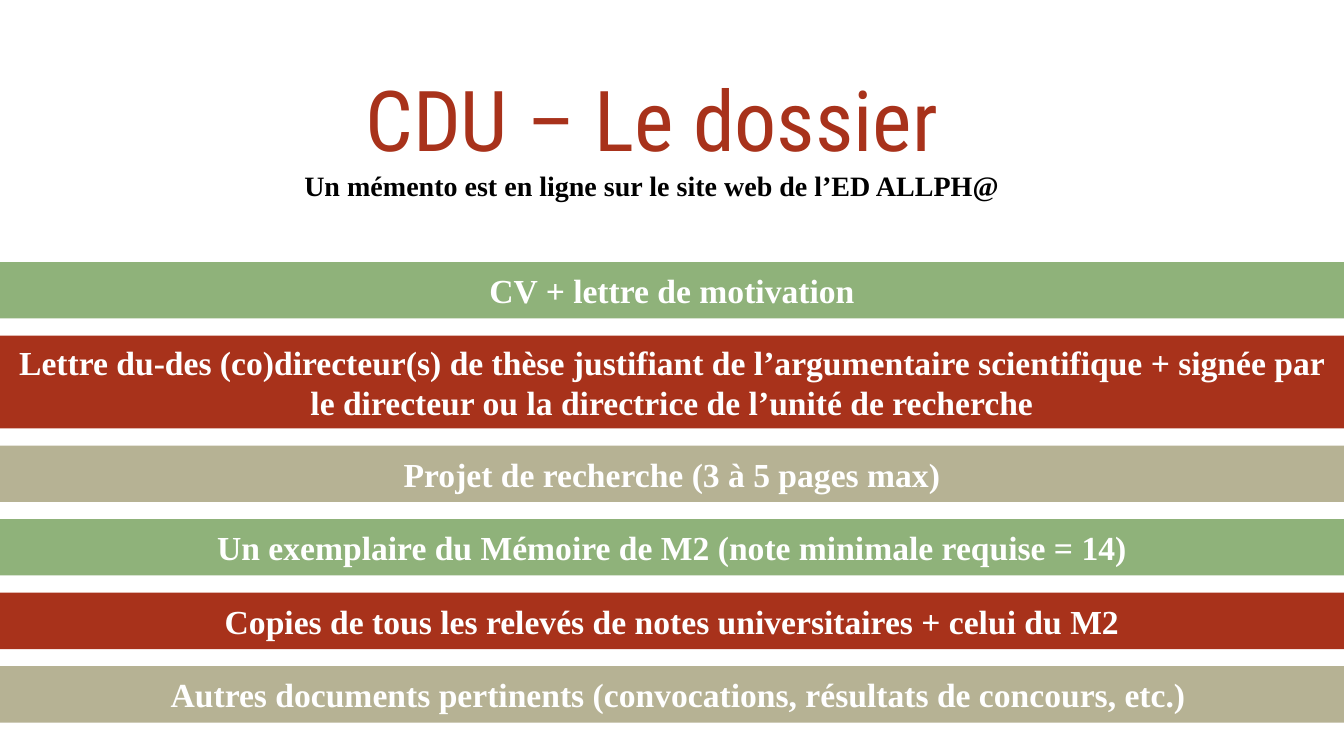
"""Build the slide listing the documents of the CDU application file."""
from dataclasses import dataclass

from pptx import Presentation
from pptx.dml.color import RGBColor
from pptx.enum.shapes import MSO_SHAPE
from pptx.enum.text import MSO_ANCHOR, PP_ALIGN
from pptx.util import Inches, Pt


@dataclass(frozen=True)
class Theme:
    """Colours, fonts and type sizes of the slide."""
    green: str = "8FB27A"
    red: str = "A8321B"
    sand: str = "B6B294"
    white: str = "FFFFFF"
    black: str = "000000"
    title_font: str = "Roboto Condensed"
    body_font: str = "Times New Roman"
    title_size: int = 60
    subtitle_size: int = 20
    band_size: int = 24


THEME = Theme()
WIDTH, HEIGHT = 13.33, 7.5
LINE_HEIGHT, BAND_PADDING, BAND_GAP = 0.36, 0.2, 0.17
INSET = 0.1
BAND_COLOURS = (THEME.green, THEME.red, THEME.sand)
BANDS = (
    ("CV + lettre de motivation", 1, 0),
    ("Lettre du-des (co)directeur(s) de thèse justifiant de l’argumentaire scientifique"
     " + signée par le directeur ou la directrice de l’unité de recherche", 2, 0),
    ("Projet de recherche (3 à 5 pages max)", 1, 0),
    ("Un exemplaire du Mémoire de M2 (note minimale requise = 14)", 1, 0),
    ("Copies de tous les relevés de notes universitaires + celui du M2", 1, 0),
    ("Autres documents pertinents (convocations, résultats de concours, etc.)", 1, 0.12),
)


def write(paragraph, text, colour, **font_values):
    """Write centred text with the given font values."""
    paragraph.alignment = PP_ALIGN.CENTER
    run = paragraph.add_run()
    run.text = text
    run.font.color.rgb = RGBColor.from_string(colour)
    for name, value in font_values.items():
        setattr(run.font, name, value)


def add_heading(slide, left, top, width, height):
    """Place the title and its subtitle in the given box."""
    box = slide.shapes.add_textbox(*map(Inches, (left, top, width, height)))
    frame = box.text_frame
    frame.word_wrap = True
    write(frame.paragraphs[0], "CDU – Le dossier", THEME.red,
          name=THEME.title_font, size=Pt(THEME.title_size))
    write(frame.add_paragraph(), "Un mémento est en ligne sur le site web de l’ED ALLPH@",
          THEME.black, name=THEME.body_font, size=Pt(THEME.subtitle_size), bold=True)


def add_band(slide, left, top, width, height, text, colour, indent):
    """Draw one coloured band with its text."""
    band = slide.shapes.add_shape(
        MSO_SHAPE.RECTANGLE, *map(Inches, (left, top, width, height)))
    band.shadow.inherit = False
    band.fill.solid()
    band.fill.fore_color.rgb = RGBColor.from_string(colour)
    band.line.fill.background()
    frame = band.text_frame
    frame.word_wrap = True
    frame.vertical_anchor = MSO_ANCHOR.MIDDLE
    frame.margin_left = Inches(INSET + indent)
    write(frame.paragraphs[0], text, THEME.white,
          name=THEME.body_font, size=Pt(THEME.band_size), bold=True)


def add_bands(slide, left, top, width):
    """Stack the document bands downwards from the given top."""
    for index, (text, lines, indent) in enumerate(BANDS):
        height = lines * LINE_HEIGHT + BAND_PADDING
        colour = BAND_COLOURS[index % len(BAND_COLOURS)]
        add_band(slide, left, top, width, height, text, colour, indent)
        top += height + BAND_GAP


def main():
    """Build and save the presentation."""
    presentation = Presentation()
    presentation.slide_width = Inches(WIDTH)
    presentation.slide_height = Inches(HEIGHT)
    slide = presentation.slides.add_slide(presentation.slide_layouts[6])
    add_heading(slide, 0.1 * WIDTH, 0.62, 0.77 * WIDTH, 1.45)
    add_bands(slide, 0, 2.6, WIDTH)
    presentation.save("out.pptx")


if __name__ == "__main__":
    main()
